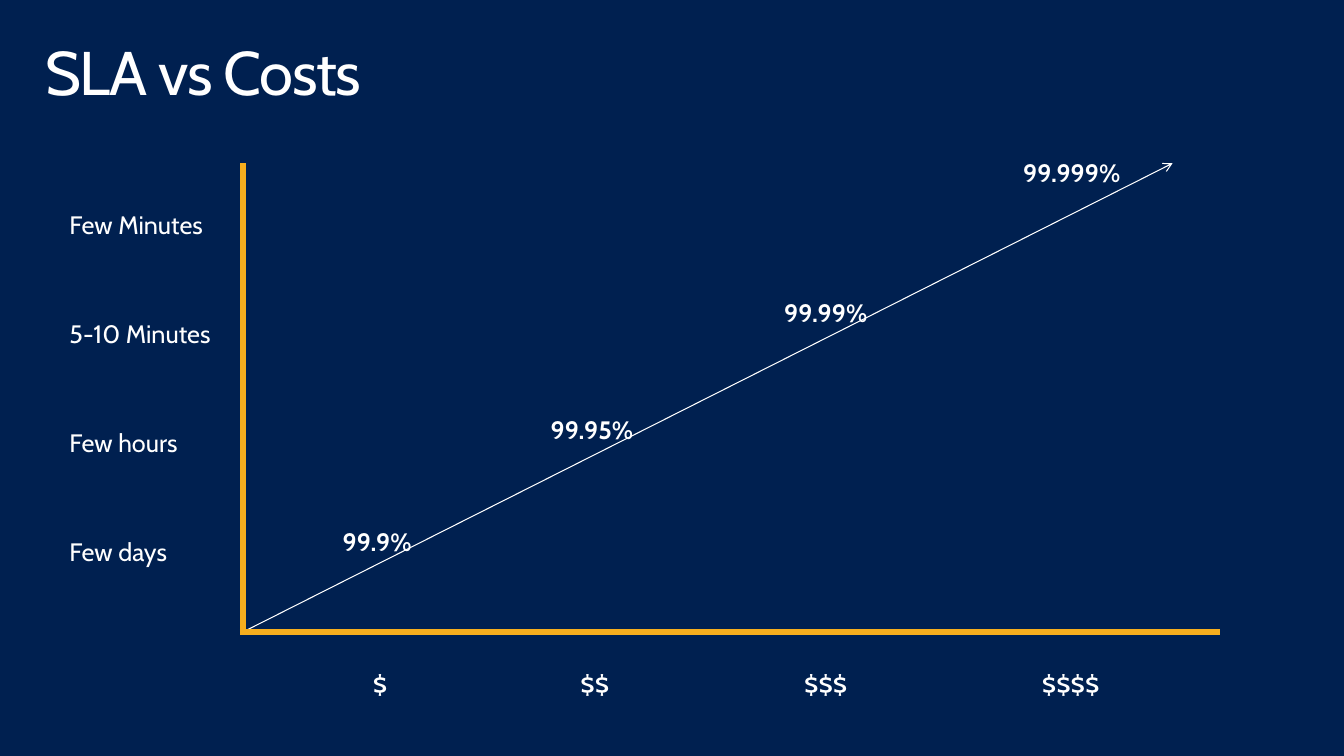
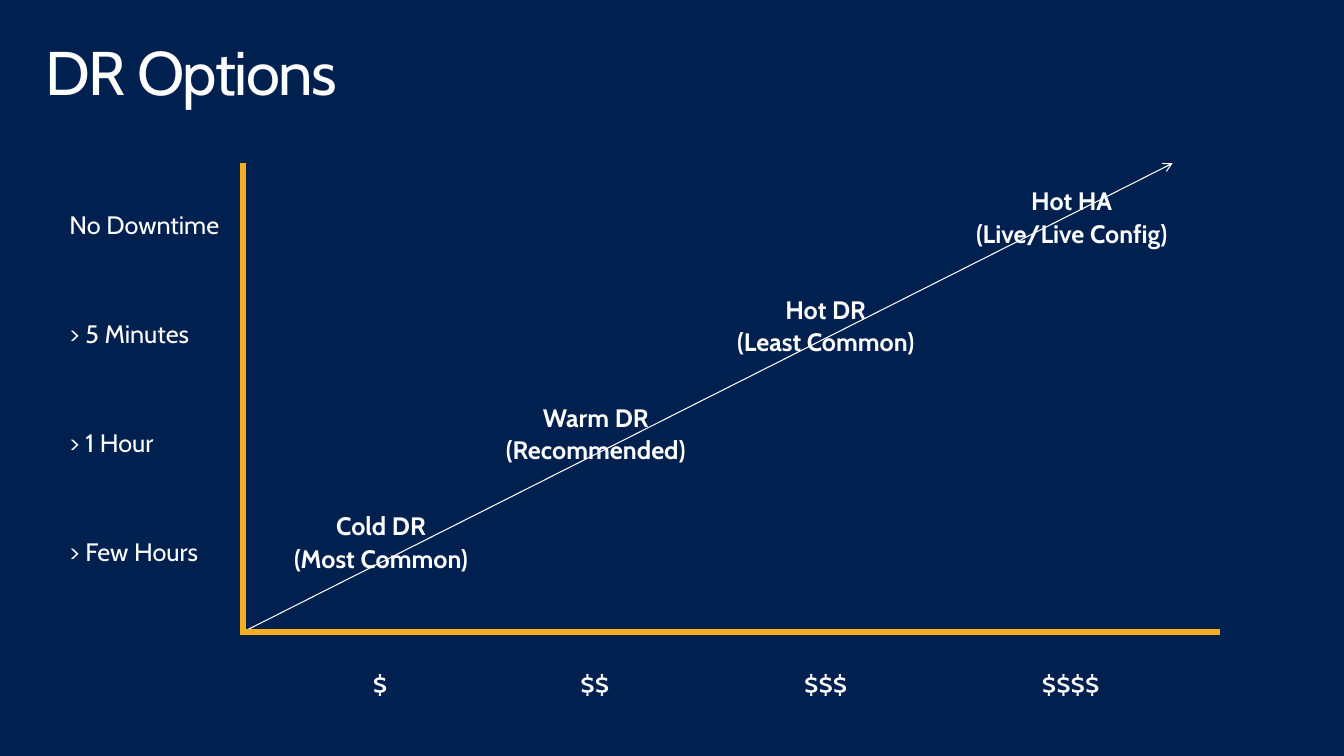
from dataclasses import dataclass

from pptx import Presentation
from pptx.dml.color import RGBColor
from pptx.enum.shapes import MSO_CONNECTOR
from pptx.enum.text import MSO_ANCHOR, MSO_AUTO_SIZE, PP_ALIGN
from pptx.oxml.ns import qn
from pptx.slide import Slide
from pptx.text.text import TextFrame
from pptx.util import Inches, Pt
from lxml.etree import SubElement

NAVY = RGBColor(0x00, 0x20, 0x50)
WHITE = RGBColor(0xFF, 0xFF, 0xFF)
AMBER = RGBColor(0xF6, 0xAE, 0x1E)
FONT = "Cabin"

AXIS_X, AXIS_TOP, AXIS_Y = 2.41, 1.62, 6.27
ROW_LEFT, ROW_TOP, ROW_STEP = 0.59, 2.01, 1.08
COST_CENTERS = (3.77, 5.9, 8.19, 10.62)
POINT_WIDTH = 2.4


@dataclass(frozen=True)
class Point:
    """A label on the rising line, centred at x, one string per line."""
    x: float
    top: float
    lines: tuple[str, ...]


@dataclass(frozen=True)
class Graph:
    title: str
    rows: tuple[str, ...]
    points: tuple[Point, ...]


GRAPHS = (
    Graph(
        "SLA vs Costs",
        ("Few Minutes", "5-10 Minutes", "Few hours", "Few days"),
        (
            Point(3.74, 5.16, ("99.9%",)),
            Point(5.87, 4.04, ("99.95%",)),
            Point(8.19, 2.88, ("99.99%",)),
            Point(10.63, 1.49, ("99.999%",)),
        ),
    ),
    Graph(
        "DR Options",
        ("No Downtime", "> 5 Minutes", "> 1 Hour", "> Few Hours"),
        (
            Point(3.78, 5.0, ("Cold DR", "(Most Common)")),
            Point(5.91, 3.92, ("Warm DR", "(Recommended)")),
            Point(8.19, 2.85, ("Hot DR", "(Least Common)")),
            Point(10.63, 1.77, ("Hot HA", "(Live/Live Config)")),
        ),
    ),
)


def format_text(tf: TextFrame, size: float, align: PP_ALIGN,
                bold: bool = False, side_inset: float = 0.1) -> None:
    tf.margin_left = tf.margin_right = Inches(side_inset)
    tf.margin_top = tf.margin_bottom = Inches(0.1)
    tf.vertical_anchor = MSO_ANCHOR.TOP
    for i, p in enumerate(tf.paragraphs):
        p.alignment = align
        p.line_spacing = 0.9
        p.space_before = Pt(4 if i else 0)
        for r in p.runs:
            r.font.name = FONT
            r.font.size = Pt(size)
            r.font.bold = bold
            r.font.color.rgb = WHITE


def add_title(s: Slide, text: str) -> None:
    sp = s.shapes.title
    sp.left, sp.top = Inches(0.29), Inches(0.32)
    sp.width, sp.height = Inches(12.75), Inches(0.98)
    tf = sp.text_frame
    tf.text = text
    tf.auto_size = MSO_AUTO_SIZE.NONE
    format_text(tf, 44, PP_ALIGN.LEFT, side_inset=0.16)
    for r in tf.paragraphs[0].runs:
        r.font._element.set("spc", "-100")


def add_label(s: Slide, lines: tuple[str, ...], left: float, top: float, width: float,
              size: float = 18, align: PP_ALIGN = PP_ALIGN.CENTER, bold: bool = False) -> None:
    height = 0.2 + size * 1.08 / 72 + 0.34 * (len(lines) - 1)
    sp = s.shapes.add_textbox(Inches(left), Inches(top), Inches(width), Inches(height))
    tf = sp.text_frame
    tf.text = "\n".join(lines)
    tf.word_wrap = False
    tf.auto_size = MSO_AUTO_SIZE.SHAPE_TO_FIT_TEXT
    format_text(tf, size, align, bold)


def add_line(s: Slide, start: tuple[float, float], end: tuple[float, float],
             color: RGBColor, weight: float, arrow: bool = False) -> None:
    ends = (Inches(v) for v in (*start, *end))
    line = s.shapes.add_connector(MSO_CONNECTOR.STRAIGHT, *ends)
    line.line.color.rgb = color
    line.line.width = Pt(weight)
    if arrow:
        SubElement(line.line._get_or_add_ln(), qn("a:tailEnd"), type="arrow")
    SubElement(line._element.spPr, qn("a:effectLst"))


def add_graph(s: Slide, graph: Graph) -> None:
    add_title(s, graph.title)
    add_line(s, (AXIS_X, AXIS_Y), (11.63, AXIS_TOP), WHITE, 0.75, arrow=True)
    for i, center in enumerate(COST_CENTERS, start=1):
        width = 0.25 + 0.15 * i
        add_label(s, ("$" * i,), center - width / 2, 6.56, width, size=20)
    for i, row in enumerate(graph.rows):
        add_label(s, (row,), ROW_LEFT, ROW_TOP + i * ROW_STEP, 1.75, align=PP_ALIGN.LEFT)
    add_line(s, (2.38, AXIS_Y), (12.1, AXIS_Y), AMBER, 4)
    add_line(s, (AXIS_X, AXIS_TOP), (AXIS_X, AXIS_Y), AMBER, 4)
    for point in graph.points:
        add_label(s, point.lines, point.x - POINT_WIDTH / 2, point.top, POINT_WIDTH, bold=True)


def main() -> None:
    prs = Presentation()
    prs.slide_width, prs.slide_height = Inches(13.33), Inches(7.5)
    fill = prs.slide_master.background.fill
    fill.solid()
    fill.fore_color.rgb = NAVY
    title_only = prs.slide_layouts[5]
    for graph in GRAPHS:
        add_graph(prs.slides.add_slide(title_only), graph)
    prs.save("out.pptx")


if __name__ == "__main__":
    main()
